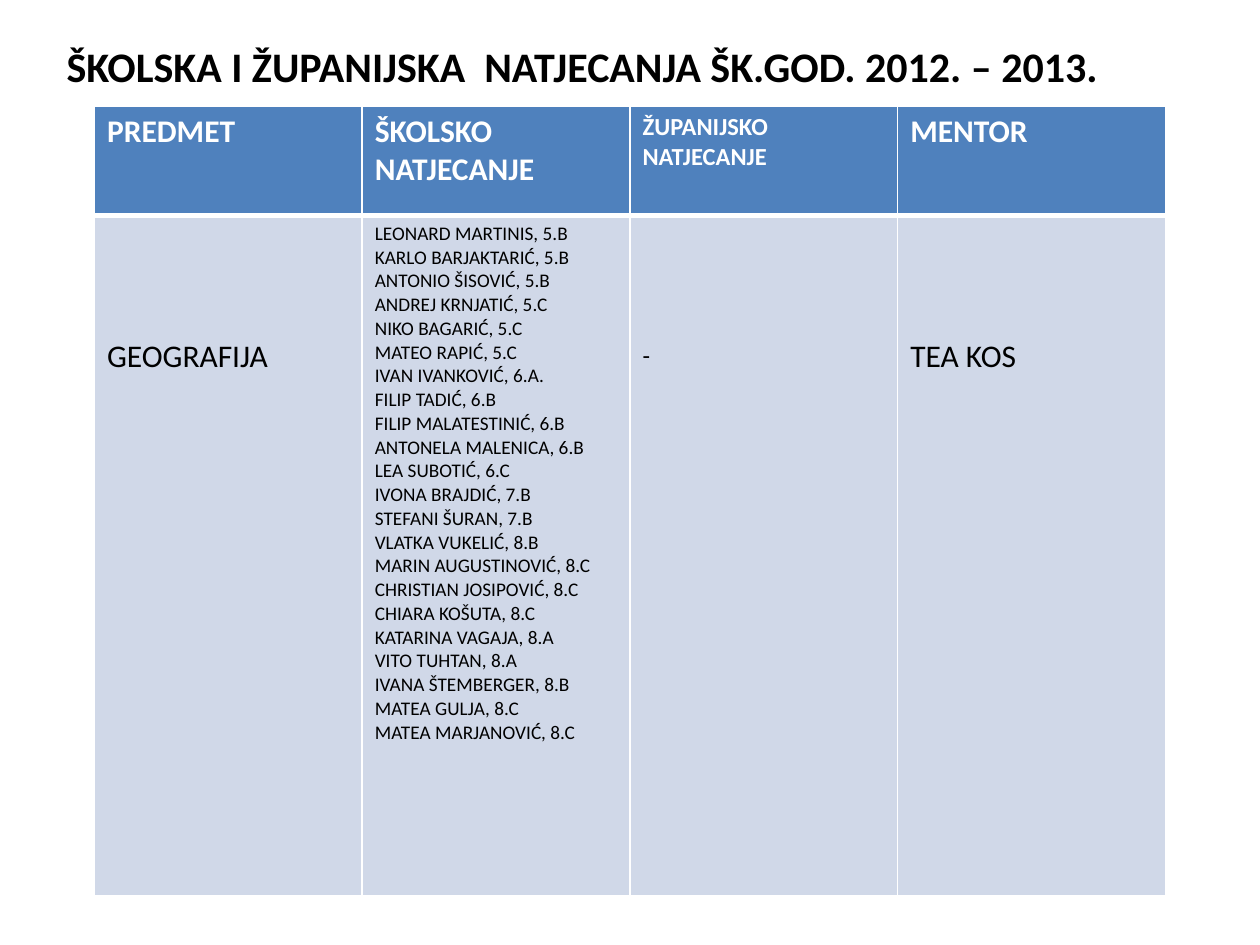
from pptx import Presentation
from pptx.dml.color import RGBColor
from pptx.enum.text import MSO_ANCHOR
from pptx.oxml.ns import qn
from pptx.util import Inches, Pt
from lxml.etree import Element, SubElement

TITLE = "ŠKOLSKA I ŽUPANIJSKA  NATJECANJA ŠK.GOD. 2012. – 2013."
HEADS = [
    ("PREDMET", "large"),
    ("ŠKOLSKO NATJECANJE", "large"),
    ("ŽUPANIJSKO NATJECANJE", "medium"),
    ("MENTOR", "large"),
]
PUPILS = [
    "LEONARD MARTINIS, 5.B",
    "KARLO BARJAKTARIĆ, 5.B",
    "ANTONIO ŠISOVIĆ, 5.B",
    "ANDREJ KRNJATIĆ, 5.C",
    "NIKO BAGARIĆ, 5.C",
    "MATEO RAPIĆ, 5.C",
    "IVAN IVANKOVIĆ, 6.A.",
    "FILIP TADIĆ, 6.B",
    "FILIP MALATESTINIĆ, 6.B",
    "ANTONELA MALENICA, 6.B",
    "LEA SUBOTIĆ, 6.C",
    "IVONA BRAJDIĆ, 7.B",
    "STEFANI ŠURAN, 7.B",
    "VLATKA VUKELIĆ, 8.B",
    "MARIN AUGUSTINOVIĆ, 8.C",
    "CHRISTIAN JOSIPOVIĆ, 8.C",
    "CHIARA KOŠUTA, 8.C",
    "KATARINA VAGAJA, 8.A",
    "VITO TUHTAN, 8.A",
    "IVANA ŠTEMBERGER, 8.B",
    "MATEA GULJA, 8.C",
    "MATEA MARJANOVIĆ, 8.C",
]
BODY = [
    (["GEOGRAFIJA"], "large", 0.97),
    (PUPILS, "small", 0.05),
    (["-"], "medium", 1.0),
    (["TEA KOS"], "large", 0.97),
]
THEME = {
    "font": "Calibri",
    "title": 24, "large": 18, "medium": 14, "small": 11,
    "ink": "000000", "white": "FFFFFF",
    "head": "4F81BD", "body": "D0D8E8",
    "thin": 1, "thick": 3,
}
LEFT, TOP, WIDTH = 0.75, 0.84, 8.5
ROWS = [0.87, 5.4]


def write(frame, lines, size, color, bold):
    for i, line in enumerate(lines):
        para = frame.paragraphs[0] if i == 0 else frame.add_paragraph()
        run = para.add_run()
        run.text = line
        font = run.font
        font.name = THEME["font"]
        font.size = Pt(THEME[size])
        font.bold = bold
        font.color.rgb = RGBColor.from_string(THEME[color])


def border(cell, sides):
    props = cell._tc.get_or_add_tcPr()
    for i, (side, width) in enumerate(sides.items()):
        line = Element(qn("a:ln" + side), w=str(Pt(THEME[width])))
        fill = SubElement(line, qn("a:solidFill"))
        SubElement(fill, qn("a:srgbClr"), val=THEME["white"])
        props.insert(i, line)


def paint(cell, fill, top, base):
    cell.fill.solid()
    cell.fill.fore_color.rgb = RGBColor.from_string(THEME[fill])
    border(cell, {"L": "thin", "R": "thin", "T": top, "B": base})


def main():
    deck = Presentation()
    deck.slide_width, deck.slide_height = Inches(10), Inches(7.5)
    slide = deck.slides.add_slide(deck.slide_layouts[6])

    box = slide.shapes.add_textbox(Inches(0.43), Inches(0.21), Inches(9.29), Inches(0.63))
    frame = box.text_frame
    frame.word_wrap = True
    frame.vertical_anchor = MSO_ANCHOR.MIDDLE
    write(frame, [TITLE], "title", "ink", True)

    table = slide.shapes.add_table(
        len(ROWS), len(HEADS), Inches(LEFT), Inches(TOP), Inches(WIDTH), Inches(sum(ROWS))
    ).table
    table.horz_banding = False
    for row, height in zip(table.rows, ROWS):
        row.height = Inches(height)
    for col in table.columns:
        col.width = Inches(WIDTH / len(HEADS))

    for i, (text, size) in enumerate(HEADS):
        cell = table.cell(0, i)
        paint(cell, "head", "thin", "thick")
        write(cell.text_frame, [text], size, "white", True)

    for i, (lines, size, inset) in enumerate(BODY):
        cell = table.cell(1, i)
        paint(cell, "body", "thick", "thin")
        cell.margin_top = Inches(inset)
        write(cell.text_frame, lines, size, "ink", False)

    deck.save("out.pptx")


if __name__ == "__main__":
    main()
